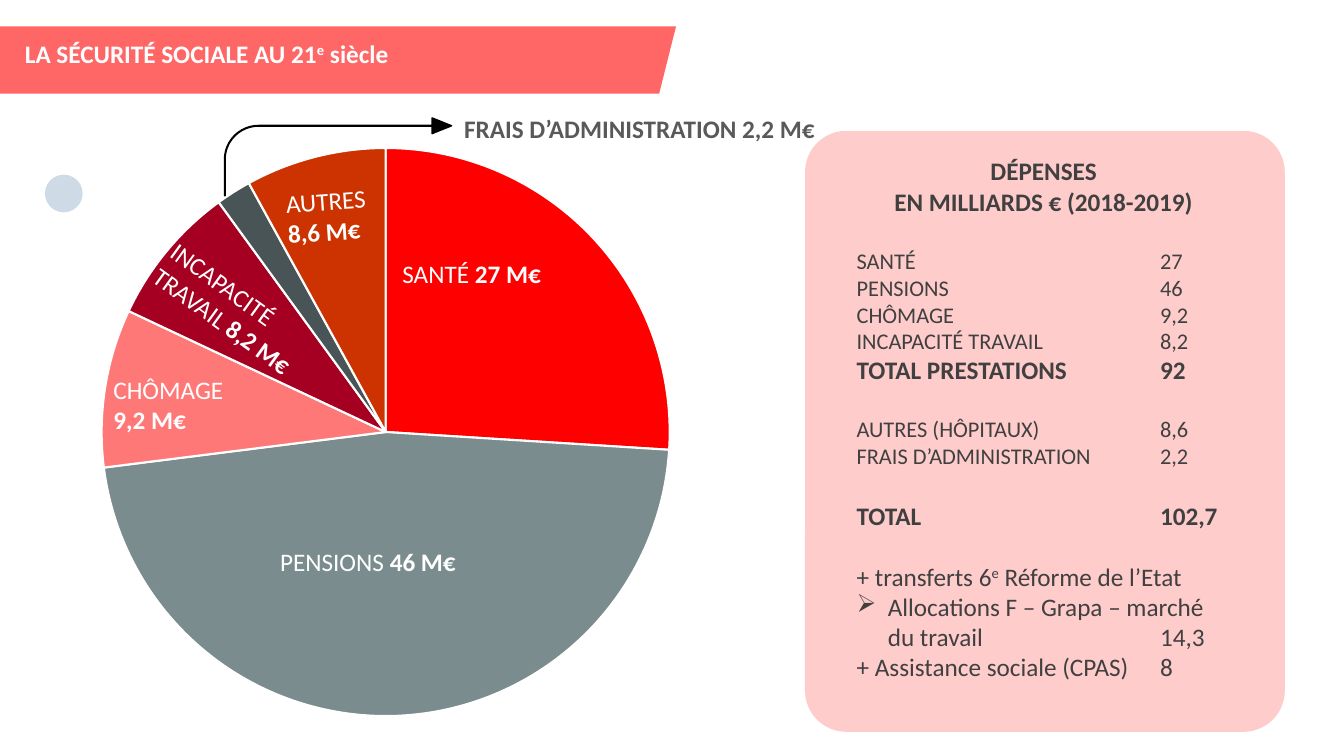
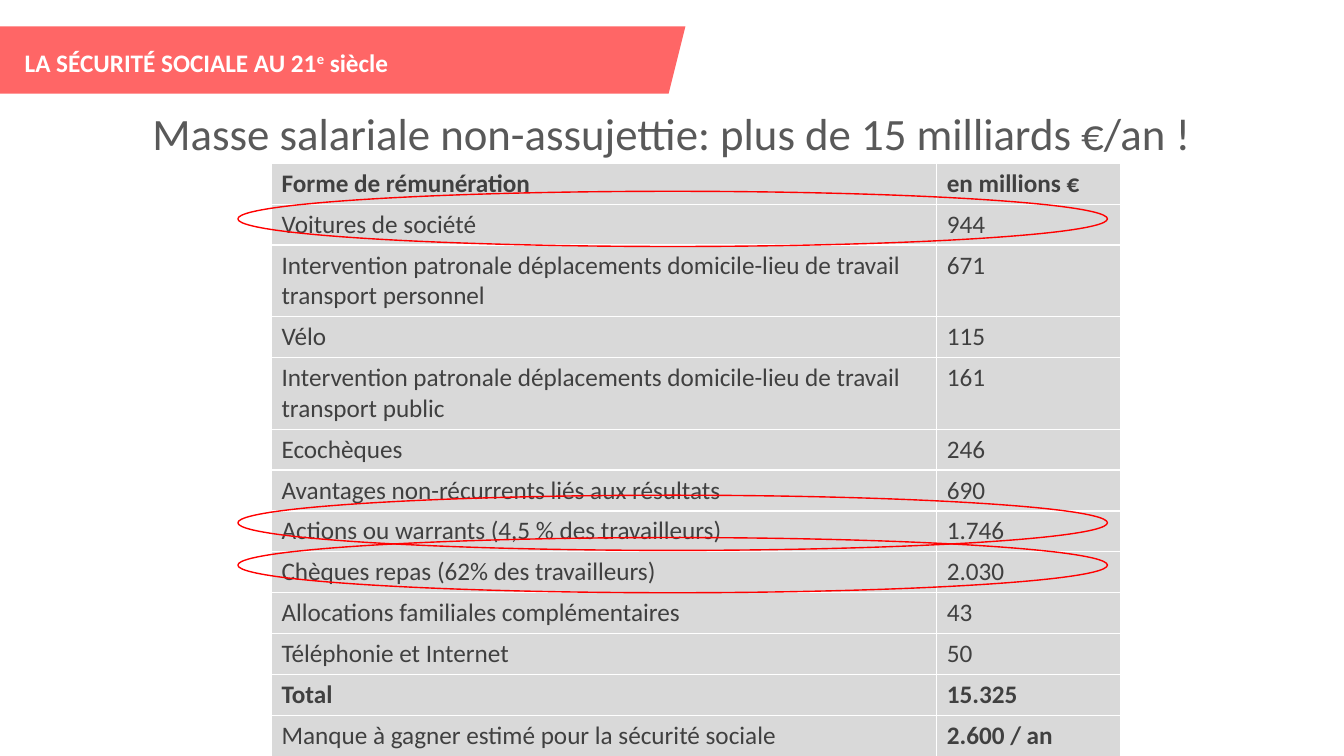
from lxml import etree
from pptx import Presentation
from pptx import util as u
from pptx.chart.data import CategoryChartData
from pptx.dml.color import RGBColor
from pptx.enum import chart, shapes, text
from pptx.oxml import ns, parse_xml

W, H = u.Inches(13.333), u.Inches(7.5)
FONT = "Calibri"
WHITE, DARK, GREY, RED = "FFFFFF", "404040", "595959", "FF0000"
BAND, PANEL, DOT, BLACK, CELL = "FF6666", "FFCCCC", "CEDBE6", "000000", "D9D9D9"
SHAPE, LEFT, CENTER = shapes.MSO_SHAPE, text.PP_ALIGN.LEFT, text.PP_ALIGN.CENTER
LINE_GAP = 22
VALUE_TAB = 3.01
BOLD, SUP = {"bold": True}, {"sup": True}

HEADING = [("LA SÉCURITÉ SOCIALE AU 21", {}), ("e", SUP), (" siècle", {})]

SLICES = [(26, RED), (47, "7A8C8E"), (9, "FF7878"), (8, "A50021"), (2, "495456"), (8, "CC3300")]

SLICE_LABELS = [
    ((29.2, 33.5, 14.7, 5.3), 0, [[("SANTÉ ", {}), ("27 M€", BOLD)]]),
    ((20.1, 71.6, 14.7, 5.3), 0, [[("PENSIONS ", {}), ("46 M€", BOLD)]]),
    ((7.7, 48.8, 14.7, 9.5), 0, [[("CHÔMAGE", {})], [("9,2 M€", BOLD)]]),
    ((10.3, 36.7, 14.7, 9.5), 35.9, [[("INCAPACITÉ TRAVAIL ", {}), ("8,2 M€", BOLD)]]),
    ((20.6, 23.7, 10.6, 9.5), -4, [[("AUTRES", {})], [("8,6 M€", BOLD)]]),
]

STRONG, SMALL = {"bold": True}, {"size": 16}
EXPENSES = [
    ("DÉPENSES", {"bold": True, "align": CENTER}),
    ("EN MILLIARDS € (2018-2019)", {"bold": True, "align": CENTER}),
    ("SANTÉ\t27", {"size": 16, "before": LINE_GAP}),
    ("PENSIONS\t46", SMALL),
    ("CHÔMAGE\t9,2", SMALL),
    ("INCAPACITÉ TRAVAIL\t8,2", SMALL),
    ("TOTAL PRESTATIONS\t92", STRONG),
    ("AUTRES (HÔPITAUX)\t8,6", {"size": 16, "before": LINE_GAP}),
    ("FRAIS D’ADMINISTRATION\t2,2", SMALL),
    ("TOTAL\t102,7", {"bold": True, "before": LINE_GAP}),
    ([("+ transferts 6", {}), ("e", SUP), (" Réforme de l’Etat", {})], {"before": LINE_GAP}),
    ("Allocations F – Grapa – marché du travail\t14,3", {"bullet": "➢"}),
    ("+ Assistance sociale (CPAS)\t8", {}),
]

COMMUTE = "Intervention patronale déplacements domicile-lieu de travail transport "
PAY_ROWS = [
    ("Forme de rémunération", "en millions €"),
    ("Voitures de société", "944"),
    (COMMUTE + "personnel", "671"),
    ("Vélo", "115"),
    (COMMUTE + "public", "161"),
    ("Ecochèques", "246"),
    ("Avantages non-récurrents liés aux résultats", "690"),
    ("Actions ou warrants (4,5 % des travailleurs)", "1.746"),
    ("Chèques repas (62% des travailleurs)", "2.030"),
    ("Allocations familiales complémentaires", "43"),
    ("Téléphonie et Internet", "50"),
    ("Total", "15.325"),
    ("Manque à gagner estimé pour la sécurité sociale", "2.600 / an"),
]
BOLD_CELLS = {"Forme de rémunération", "en millions €", "Total", "15.325", "2.600 / an"}


def rgb(value):
    """Return the colour of a hex string."""
    return RGBColor.from_string(value)


def across(share):
    """Return a percentage of the slide's width."""
    return u.Emu(int(W * share / 100))


def down(share):
    """Return a percentage of the slide's height."""
    return u.Emu(int(H * share / 100))


def area(x, y, w, h):
    """Return a box given in percentages of the slide."""
    return across(x), down(y), across(w), down(h)


def add_pr_child(p, tag, **attrs):
    """Append an element to the paragraph's properties."""
    return etree.SubElement(p._p.get_or_add_pPr(), ns.qn(tag), attrs)


def write(tf, runs, size=18, color=DARK, bold=False, align=LEFT, before=0, tab=0, bullet=None):
    """Add one paragraph, made of a string or of (text, format) runs."""
    p = tf.add_paragraph() if tf.text else tf.paragraphs[0]
    p.alignment = align
    if before:
        p.space_before = u.Pt(before)
    if bullet:
        indent = u.Inches(0.31)
        pr = p._p.get_or_add_pPr()
        pr.set("marL", str(indent))
        pr.set("indent", str(-indent))
        add_pr_child(p, "a:buChar", char=bullet)
    if tab:
        stops = add_pr_child(p, "a:tabLst")
        etree.SubElement(stops, ns.qn("a:tab"), pos=str(u.Inches(tab)), algn="l")
    for words, style in [(runs, {})] if isinstance(runs, str) else runs:
        r = p.add_run()
        r.text = words
        r.font.name, r.font.size = FONT, u.Pt(size)
        r.font.bold = style.get("bold", bold)
        r.font.color.rgb = rgb(color)
        if style.get("sup"):
            r._r.get_or_add_rPr().set("baseline", "30000")
    return p


def add_text(s, box, paragraphs, rotation=0, **style):
    """Add a wrapped text box that holds the given paragraphs."""
    sp = s.shapes.add_textbox(*area(*box))
    sp.rotation = rotation
    tf = sp.text_frame
    tf.word_wrap = True
    for runs in paragraphs:
        write(tf, runs, **style)
    return sp


def add_figure(s, kind, box, fill=None, line=None, adjust=()):
    """Add a preset shape with a plain fill and line."""
    sp = s.shapes.add_shape(kind, *area(*box))
    sp.shadow.inherit = False
    for i, value in enumerate(adjust):
        sp.adjustments[i] = value
    if fill:
        sp.fill.solid()
        sp.fill.fore_color.rgb = rgb(fill)
    else:
        sp.fill.background()
    if line:
        sp.line.color.rgb = rgb(line)
        sp.line.width = u.Pt(1)
    else:
        sp.line.fill.background()
    return sp


def add_band(s, x):
    """Add the slanted band that carries the heading."""
    add_figure(s, SHAPE.PARALLELOGRAM, (x, 3.5, 52.4, 8.9), BAND)


def fill_title(s, box, runs, anchor, **style):
    """Place the title placeholder in front and write it."""
    sp = s.shapes.title
    sp.left, sp.top, sp.width, sp.height = area(*box)
    s.shapes._spTree.append(sp._element)
    sp.text_frame.vertical_anchor = anchor
    return write(sp.text_frame, runs, **style)


def add_pie(s, box):
    """Add the pie of expenses with one colour per slice."""
    data = CategoryChartData()
    data.categories = [str(i + 1) for i in range(len(SLICES))]
    data.add_series("Series 1", [value for value, _ in SLICES])
    ch = s.shapes.add_chart(chart.XL_CHART_TYPE.PIE, *area(*box), data).chart
    ch.has_legend = ch.has_title = False
    ch.font.name, ch.font.size = FONT, u.Pt(10)
    ch.font.color.rgb = rgb(BLACK)
    plot = ch.plots[0]
    plot.vary_by_categories = True
    for i, (_, color) in enumerate(SLICES):
        form = plot.series[0].points[i].format
        form.fill.solid()
        form.fill.fore_color.rgb = rgb(color)
        form.line.color.rgb = rgb(WHITE)
        form.line.width = u.Pt(1.5)
    area_xml = ch._chartSpace.chart.plotArea
    for old in area_xml.findall(ns.qn("c:layout")):
        area_xml.remove(old)
    area_xml.insert(0, parse_xml(
        f'<c:layout {ns.nsdecls("c")}><c:manualLayout><c:layoutTarget val="inner"/>'
        '<c:xMode val="edge"/><c:yMode val="edge"/><c:x val="0.025"/><c:y val="0.025"/>'
        '<c:w val="0.95"/><c:h val="0.95"/></c:manualLayout></c:layout>'))


def add_pay_table(s, box):
    """Add the table of pay that escapes contributions."""
    tbl = s.shapes.add_table(len(PAY_ROWS), 2, *area(*box)).table
    tbl.horz_banding = False
    for col, share in zip(tbl.columns, (49.5, 13.7)):
        col.width = across(share)
    for row, words in zip(tbl.rows, PAY_ROWS):
        row.height = down(8.9 if words[0].startswith(COMMUTE) else 5.1)
        for cell, value in zip(row.cells, words):
            cell.fill.solid()
            cell.fill.fore_color.rgb = rgb(CELL)
            write(cell.text_frame, value, bold=value in BOLD_CELLS)


def build_expenses(s):
    """Build the slide with the pie and the panel of amounts."""
    add_figure(s, SHAPE.ROUNDED_RECTANGLE, (59.9, 17.3, 35.7, 79.5), PANEL, adjust=[0.086])
    add_figure(s, SHAPE.OVAL, (3.4, 23.2, 2.7, 4.8), DOT, DOT)
    add_band(s, -2.1)
    add_pie(s, (6.45, 17.6, 44.5, 79.1))
    for box, rotation, paragraphs in SLICE_LABELS:
        add_text(s, box, paragraphs, rotation, color=WHITE)
    add_text(s, (33.8, 14.3, 28.2, 5.3), ["FRAIS D’ADMINISTRATION 2,2 M€"], color=GREY, bold=True)
    add_figure(s, SHAPE.BENT_ARROW, (16.7, 15.6, 16.9, 10.3), BLACK, BLACK,
               [0.008, 0.101, 0.25, 0.438])
    fill_title(s, (1.1, 4.4, 57.8, 5.3), HEADING, text.MSO_ANCHOR.TOP, color=WHITE, bold=True)
    tf = add_text(s, (63, 15.2, 29.3, 80.4), []).text_frame
    tf.vertical_anchor = text.MSO_ANCHOR.MIDDLE
    for runs, style in EXPENSES:
        write(tf, runs, tab=VALUE_TAB, **style)


def build_pay(s):
    """Build the slide with the table and its circled rows."""
    add_band(s, -1.4)
    p = fill_title(s, (0, 13.6, 100, 8.9),
                   "Masse salariale non-assujettie: plus de 15 milliards €/an !",
                   text.MSO_ANCHOR.MIDDLE, size=32, color=GREY, align=CENTER)
    p.line_spacing = 0.9
    add_pay_table(s, (20.2, 21.6, 63.2, 77.3))
    add_text(s, (1.1, 5.6, 57.8, 5.3), [HEADING], color=WHITE, bold=True)
    for y in (25.3, 65.5, 71.1):
        add_figure(s, SHAPE.OVAL, (17.7, y, 64.7, 7.3), line=RED)


def main():
    """Build and save the presentation."""
    prs = Presentation()
    prs.slide_width, prs.slide_height = W, H
    for build in (build_expenses, build_pay):
        build(prs.slides.add_slide(prs.slide_layouts[5]))
    prs.save("out.pptx")


if __name__ == "__main__":
    main()
